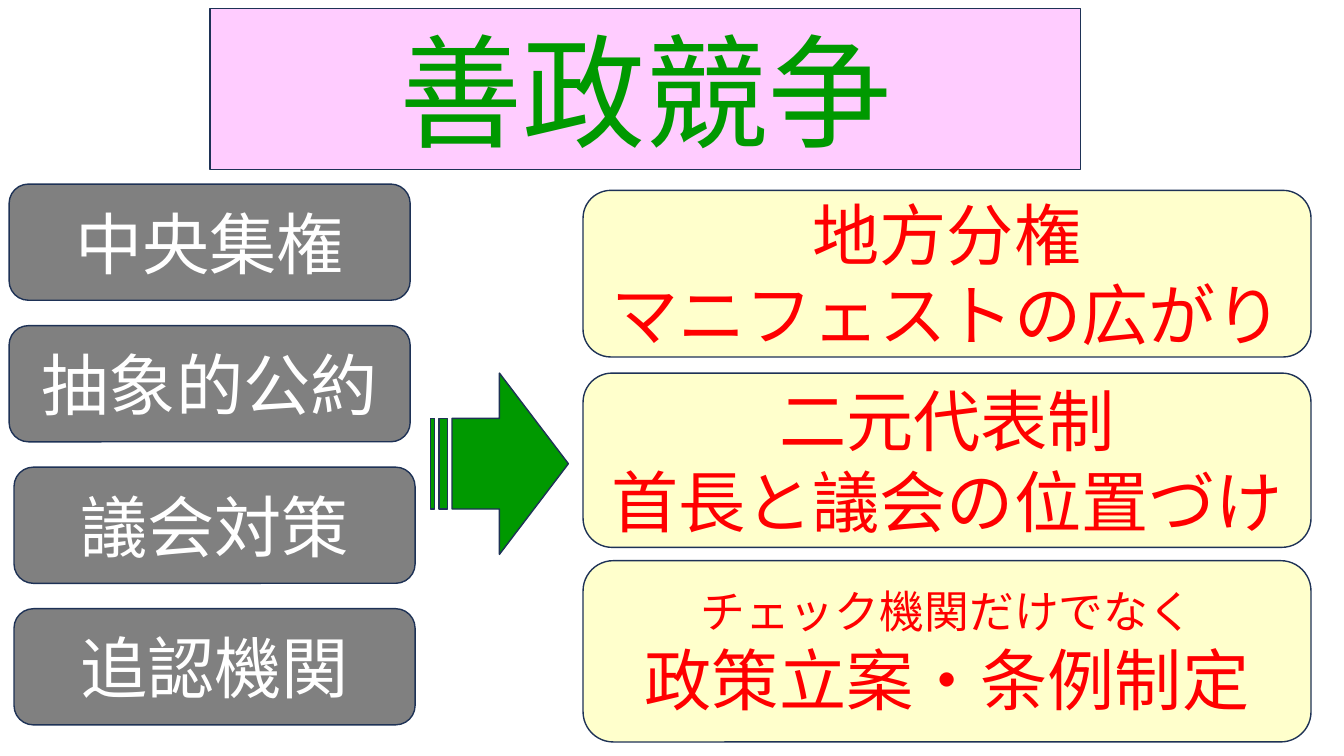
from lxml import etree
from pptx import Presentation
from pptx.dml.color import RGBColor
from pptx.enum.shapes import MSO_SHAPE as Shape
from pptx.enum.text import MSO_ANCHOR as Anchor, MSO_AUTO_SIZE as Fit, PP_ALIGN as Align
from pptx.oxml.ns import qn
from pptx.util import Pt

FONT = "Noto Sans CJK JP"
NAVY = RGBColor(0x1E, 0x32, 0x56)
GREEN = RGBColor(0x00, 0x99, 0x00)
PINK = RGBColor(0xFF, 0xCC, 0xFF)
GRAY = RGBColor(0x80, 0x80, 0x80)
WHITE = RGBColor(0xFF, 0xFF, 0xFF)
CREAM = RGBColor(0xFF, 0xFF, 0xCC)
RED = RGBColor(0xFF, 0x00, 0x00)

OLD = [("中央集権", 6.5), ("抽象的公約", 6.5), ("議会対策", 10), ("追認機関", 10)]
OLD_TOP, OLD_STEP = 131.5, 101.1
NEW = [
    (136, 119, [("地方分権", 48), ("マニフェストの広がり", 48)]),
    (266.5, 124.5, [("二元代表制", 48), ("首長と議会の位置づけ", 48)]),
    (400.5, 129.5, [("チェック機関だけでなく", 32), ("政策立案・条例制定", 48)]),
]


def paint(shape, fill):
    shape.fill.solid()
    shape.fill.fore_color.rgb = fill
    shape.line.color.rgb = NAVY
    shape.line.width = Pt(1)


def write(shape, lines, color):
    """Fill the shape with centred lines, each a pair of text and size."""
    frame = shape.text_frame
    frame.text = "\n".join(text for text, _ in lines)
    frame.word_wrap = True
    frame.auto_size = Fit.NONE
    frame.vertical_anchor = Anchor.MIDDLE
    for para, (_, size) in zip(frame.paragraphs, lines):
        para.alignment = Align.CENTER
        font = para.runs[0].font
        font.size = Pt(size)
        font.color.rgb = color
        font.name = FONT
        props = para.runs[0]._r.get_or_add_rPr()
        etree.SubElement(props, qn("a:ea"), typeface=FONT)


def add_form(slide, kind, box, fill):
    shape = slide.shapes.add_shape(kind, *map(Pt, box))
    shape.shadow.inherit = False
    paint(shape, fill)
    return shape


def add_card(slide, box, fill, lines, color):
    write(add_form(slide, Shape.ROUNDED_RECTANGLE, box, fill), lines, color)


def set_title(slide, box, text):
    title = slide.shapes.title
    title.left, title.top, title.width, title.height = map(Pt, box)
    geom = etree.SubElement(title._element.spPr, qn("a:prstGeom"), prst="roundRect")
    etree.SubElement(geom, qn("a:avLst"))
    paint(title, PINK)
    write(title, [(text, 88)], GREEN)


def main():
    deck = Presentation()
    deck.slide_width, deck.slide_height = Pt(960), Pt(540)
    slide = deck.slides.add_slide(deck.slide_layouts[5])
    set_title(slide, (150, 6, 622, 115), "善政競争")
    for i, (text, left) in enumerate(OLD):
        box = (left, OLD_TOP + i * OLD_STEP, 286.5, 83)
        add_card(slide, box, GRAY, [(text, 48)], WHITE)
    add_form(slide, Shape.STRIPED_RIGHT_ARROW, (307.5, 266.5, 98.5, 129.5), GREEN)
    for top, height, lines in NEW:
        add_card(slide, (416.5, top, 520, height), CREAM, lines, RED)
    deck.save("out.pptx")


if __name__ == "__main__":
    main()
